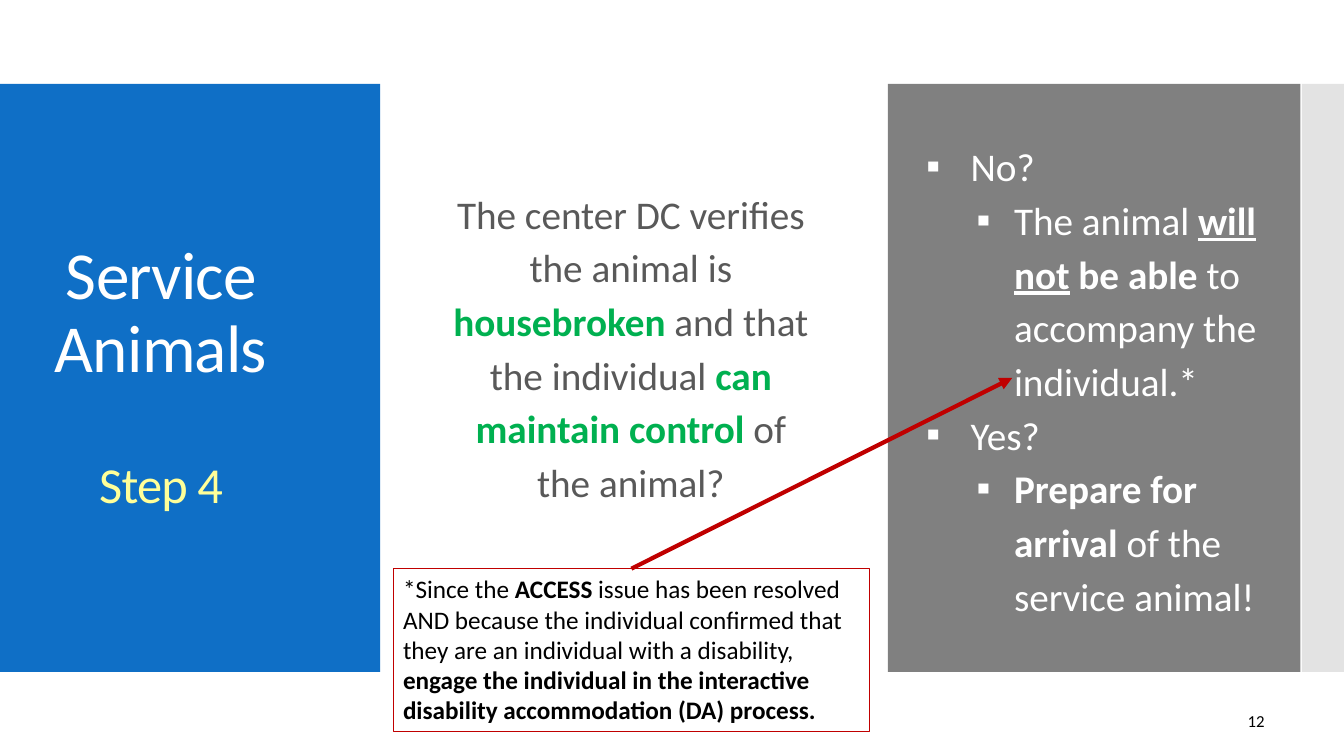
from pptx import Presentation
from pptx.dml.color import RGBColor as RGB
from pptx.enum.shapes import MSO_CONNECTOR as Link, MSO_SHAPE as Shape
from pptx.enum.text import MSO_ANCHOR as Anchor, PP_ALIGN as Align
from pptx.oxml.ns import qn
from pptx.util import Inches, Pt
from lxml.etree import SubElement as sub

theme = dict(
    font="Calibri", blue="0F6FC6", pale="C8C8C8", panel="808080", white="FFFFFF",
    black="000000", gray="595959", green="00B050", yellow="FFFF99", red="C00000",
    title=48, step=36, body=28, note=18, page=12)

deck = Presentation()
deck.slide_width, deck.slide_height = Inches(13.333), Inches(7.5)
slide = deck.slides.add_slide(deck.slide_layouts[6])
cell = deck.slide_width / 32  # grid of 32 columns by 18 rows


def block(col, row, cols, rows, fill=None, line=None, anchor=Anchor.TOP):
    """Add a rectangle, or a plain text box if it has neither fill nor line."""
    box = [round(n * cell) for n in (col, row, cols, rows)]
    if fill or line:
        item = slide.shapes.add_shape(Shape.RECTANGLE, *box)
        item.shadow.inherit = False
        item.fill.background()
        item.line.fill.background()
    else:
        item = slide.shapes.add_textbox(*box)
    if fill:
        item.fill.solid()
        item.fill.fore_color.rgb = RGB.from_string(theme[fill])
    if line:
        item.line.color.rgb = RGB.from_string(theme[line])
        item.line.width = Pt(0.75)
    item.text_frame.word_wrap = True
    item.text_frame.vertical_anchor = anchor
    return item


def write(para, runs, size, align=Align.CENTER, gap=1.0):
    """Fill a paragraph with (text, colour, style) runs; style holds b and u."""
    para.alignment, para.line_spacing = align, gap
    for text, color, style in runs:
        run = para.add_run()
        run.text = text
        font = run.font
        font.name, font.size = theme["font"], Pt(theme[size])
        font.color.rgb = RGB.from_string(theme[color])
        font.bold, font.underline = "b" in style, "u" in style


# Side bands
block(0, 2, 9.05, 14, "blue")
edge = block(31, 2, 1, 14, "pale")
tint = edge.fill._xPr.find(qn("a:solidFill"))[0]
sub(tint, qn("a:alpha"), val="50000")

# Page number
page = block(27.91, 16.68, 4, 0.96, anchor=Anchor.MIDDLE)
write(page.text_frame.paragraphs[0], [("12", "black", "")], "page")

# Answer panel
block(21.14, 2, 9.82, 14, "panel")
answers = [
    (0, [("No?", "")]),
    (1, [("The animal ", ""), ("will not", "bu"), (" be able", "b"),
         (" to accompany the individual.*", "")]),
    (0, [("Yes?", "")]),
    (1, [("Prepare for arrival ", "b"), ("of the service animal!", "")]),
]
indents = [(0.44, 0.44), (0.87, 0.37)]  # left margin and hang of each level
frame = block(21.82, 3.1, 8.47, 11.78, anchor=Anchor.MIDDLE).text_frame
for i, (level, runs) in enumerate(answers):
    para = frame.add_paragraph() if i else frame.paragraphs[0]
    write(para, [(text, "white", style) for text, style in runs],
          "body", Align.LEFT, 1.14)
    para.level = level
    left, hang = indents[level]
    props = para._p.get_or_add_pPr()
    props.set("marL", str(Inches(left)))
    props.set("indent", str(-Inches(hang)))
    sub(props, qn("a:buFont"), typeface=theme["font"])
    sub(props, qn("a:buChar"), char="▪")

# Title and step
frame = block(0.62, 4.25, 6.43, 9.5, anchor=Anchor.MIDDLE).text_frame
write(frame.paragraphs[0], [("Service Animals", "white", "")], "title", gap=0.9)
step = frame.add_paragraph()
write(step, [("Step 4", "yellow", "")], "step", gap=0.9)
step.space_before = Pt(52)
for para in frame.paragraphs:
    para.runs[0].font._element.set("spc", "-60")

# Question
ask = block(10.46, 4.25, 9.12, 9.5)
write(ask.text_frame.paragraphs[0], [
    ("The center DC verifies the animal is ", "gray", ""),
    ("housebroken", "green", "b"),
    (" and that the individual ", "gray", ""),
    ("can maintain control ", "green", "b"),
    ("of the animal?", "gray", "")], "body", gap=1.14)

# Footnote box
note = block(9.36, 13.54, 11.35, 3.88, line="red")
write(note.text_frame.paragraphs[0], [
    ("*Since the ", "black", ""),
    ("ACCESS", "black", "b"),
    (" issue has been resolved AND because the individual confirmed that "
     "they are an individual with a disability, ", "black", ""),
    ("engage the individual in the interactive disability accommodation (DA) "
     "process.", "black", "b")], "note", Align.LEFT)

# Arrow from the footnote to its mark
arrow = slide.shapes.add_connector(
    Link.STRAIGHT, *[round(n * cell) for n in (15.03, 13.54, 24.1, 9)])
arrow.begin_connect(note, 0)
arrow.line.color.rgb = RGB.from_string(theme["red"])
arrow.line.width = Pt(3)
sub(arrow.line._get_or_add_ln(), qn("a:tailEnd"), type="triangle")
sub(arrow._element.spPr, qn("a:effectLst"))

deck.save("out.pptx")
